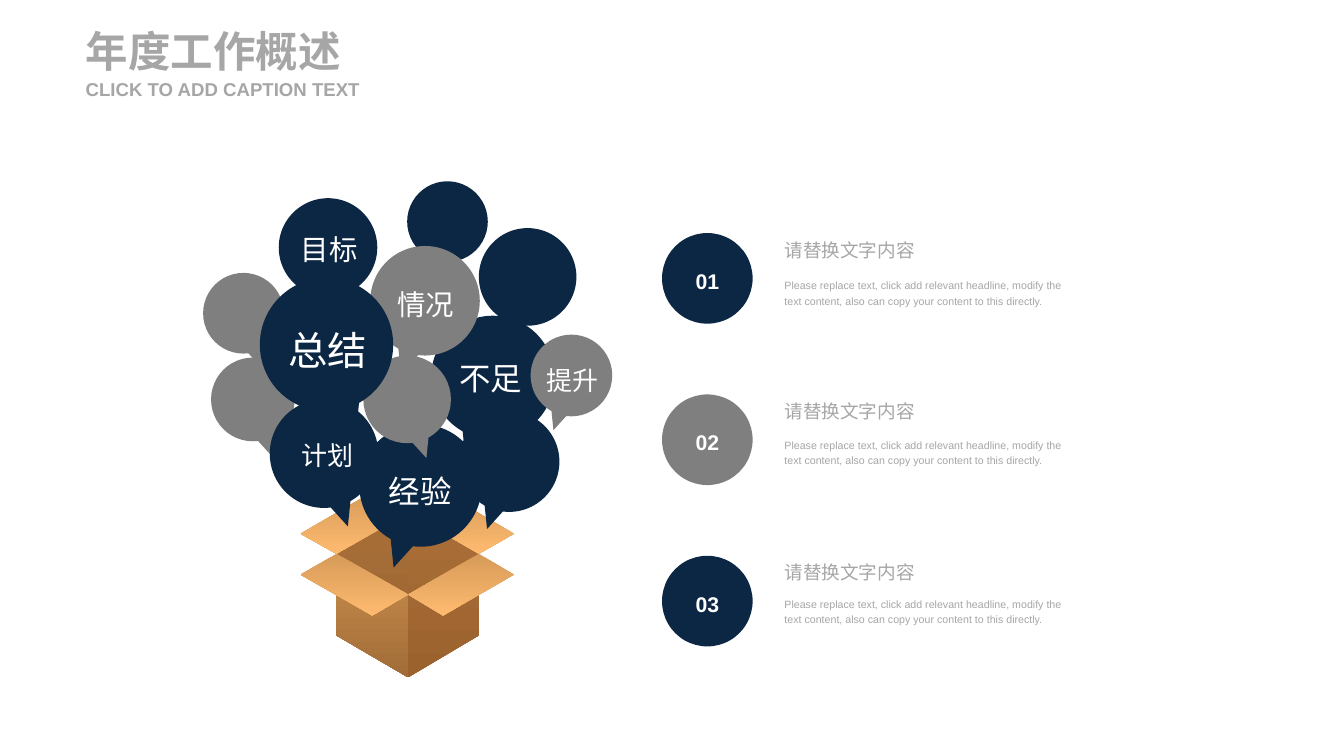
from pptx import Presentation
from pptx.dml.color import RGBColor
from pptx.enum.shapes import MSO_SHAPE as Kind
from pptx.enum.text import MSO_ANCHOR as Anchor
from pptx.enum.text import MSO_AUTO_SIZE as Fit
from pptx.enum.text import PP_ALIGN as Align
from pptx.util import Pt

PX = 9525
NAVY = RGBColor(0x0C, 0x27, 0x44)
GREY = RGBColor(0x7F, 0x7F, 0x7F)
PALE = RGBColor(0xA6, 0xA6, 0xA6)
WHITE = RGBColor(0xFF, 0xFF, 0xFF)
FLOOR = RGBColor(0xAA, 0x6F, 0x39), RGBColor(0x9C, 0x62, 0x2E)
WALL = RGBColor(0xAA, 0x6F, 0x39), RGBColor(0xA1, 0x6A, 0x34)
FRONT = RGBColor(0xCB, 0x8F, 0x4D), RGBColor(0xA1, 0x6C, 0x38)
FLAP = RGBColor(0xD6, 0x9B, 0x59), RGBColor(0xFE, 0xBA, 0x6F)

HEAD = "请替换文字内容"
BODY = ("Please replace text, click add relevant headline, modify the "
        "text content, also can copy your content to this directly.")

# Carton corners
MID = 410
BACK, RIM, BASE = (MID, 515), (MID, 597), (MID, 680)
LEFT, RIGHT = (338, 556), (481, 556)
LOW_L, LOW_R = (338, 638), (481, 638)
CARTON = [
    (FLOOR, [BACK, LEFT, LOW_L, BASE, LOW_R, RIGHT]),
    (WALL, [BACK, LEFT, RIM]),
    (FLAP, [(302, 536), LEFT, BACK, (374, 494)]),
    (FLAP, [(516, 536), RIGHT, BACK, (445, 494)]),
    (FRONT, [LEFT, LOW_L, BASE, RIM]),
    (FLAP, [(302, 577), LEFT, RIM, (374, 618)]),
    (FLAP, [(516, 577), RIGHT, RIM, (445, 618)]),
]

# Left, top, diameter, side of the tail (-1 left, 1 right), colour
BUBBLES = [
    (409, 182, 81, -1, NAVY),
    (361, 426, 123, -1, NAVY),
    (461, 413, 101, -1, NAVY),
    (433, 317, 124, -1, NAVY),
    (372, 247, 110, -1, GREY),
    (533, 336, 82, -1, GREY),
    (204, 274, 81, 1, GREY),
    (365, 357, 88, 1, GREY),
    (212, 359, 84, 1, GREY),
    (271, 401, 109, 1, NAVY),
    (261, 279, 134, 1, NAVY),
    (481, 229, 98, -1, NAVY),
    (280, 199, 99, 1, NAVY),
]

LABELS = [
    ("总结", 29.7, (280, 313, 99, 62)),
    ("不足", 23.7, (451, 348, 84, 52)),
    ("经验", 23.7, (380, 461, 84, 52)),
    ("情况", 21.4, (389, 276, 77, 47)),
    ("目标", 21.4, (292, 221, 77, 47)),
    ("提升", 19.6, (539, 355, 72, 44)),
    ("计划", 19.6, (293, 430, 72, 44)),
]


def scale(box):
    return [round(n * PX) for n in box]


def apply(item, form):
    for key, val in form.items():
        setattr(item, key, val)


def write(shape, text, size, color, bold=False, align=Align.LEFT, space=1.2, **form):
    """Fill a shape with one styled paragraph; form holds frame settings."""
    frame = shape.text_frame
    apply(frame, {"margin_left": 0, "margin_right": 0, "margin_top": 0,
                  "margin_bottom": 0, "word_wrap": True,
                  "vertical_anchor": Anchor.MIDDLE} | form)
    para = frame.paragraphs[0]
    apply(para, {"alignment": align, "line_spacing": space})
    run = para.add_run()
    run.text = text
    apply(run.font, {"name": "Arial", "size": Pt(size), "bold": bold})
    run.font.color.rgb = color


def add_text(slide, box, *args, **form):
    write(slide.shapes.add_textbox(*scale(box)), *args, **form)


def paint(shape, color):
    """Fill with one colour, or with a pair running from top to bottom."""
    shape.shadow.inherit = False
    shape.line.fill.background()
    if isinstance(color, RGBColor):
        shape.fill.solid()
        shape.fill.fore_color.rgb = color
        return
    shape.fill.gradient()
    shape.fill.gradient_angle = 270
    for stop, tone in zip(shape.fill.gradient_stops, color):
        stop.color.rgb = tone


def add_panel(slide, points, color):
    first, *rest = [scale(point) for point in points]
    pen = slide.shapes.build_freeform(*first)
    pen.add_line_segments(rest, close=True)
    paint(pen.convert_to_shape(), color)


def add_bubble(slide, left, top, size, side, color):
    bubble = slide.shapes.add_shape(
        Kind.OVAL_CALLOUT, *scale((left, top, size, size)))
    bubble.adjustments[0] = 0.22 * side
    bubble.adjustments[1] = 0.67
    paint(bubble, color)


def add_row(slide, index, color):
    shift = 162 * index
    badge = slide.shapes.add_shape(
        Kind.ROUNDED_RECTANGLE, *scale((665, 234 + shift, 91, 91)))
    badge.adjustments[0] = 0.5
    paint(badge, color)
    write(badge, f"{index + 1:02}", 16, WHITE, True, Align.CENTER)
    add_text(slide, (788, 233 + shift, 203, 31), HEAD, 14, PALE)
    add_text(slide, (788, 278 + 160 * index, 293, 66), BODY, 8, PALE,
             vertical_anchor=Anchor.TOP)


def main():
    deck = Presentation()
    apply(deck, {"slide_width": 1350 * PX, "slide_height": 759 * PX})
    slide = deck.slides.add_slide(deck.slide_layouts[6])
    for color, points in CARTON:
        add_panel(slide, points, color)
    for bubble in BUBBLES:
        add_bubble(slide, *bubble)
    for text, size, box in LABELS:
        add_text(slide, box, text, size, WHITE, align=Align.CENTER,
                 word_wrap=False, margin_top=5 * PX, margin_bottom=5 * PX,
                 vertical_anchor=Anchor.TOP, auto_size=Fit.SHAPE_TO_FIT_TEXT)
    for index, color in enumerate((NAVY, GREY, NAVY)):
        add_row(slide, index, color)
    add_text(slide, (86, 25, 295, 52), "年度工作概述", 32, PALE, True, space=1)
    add_text(slide, (86, 78, 295, 23), "CLICK TO ADD CAPTION TEXT", 14, PALE,
             True, space=1)
    deck.save("out.pptx")


if __name__ == "__main__":
    main()
